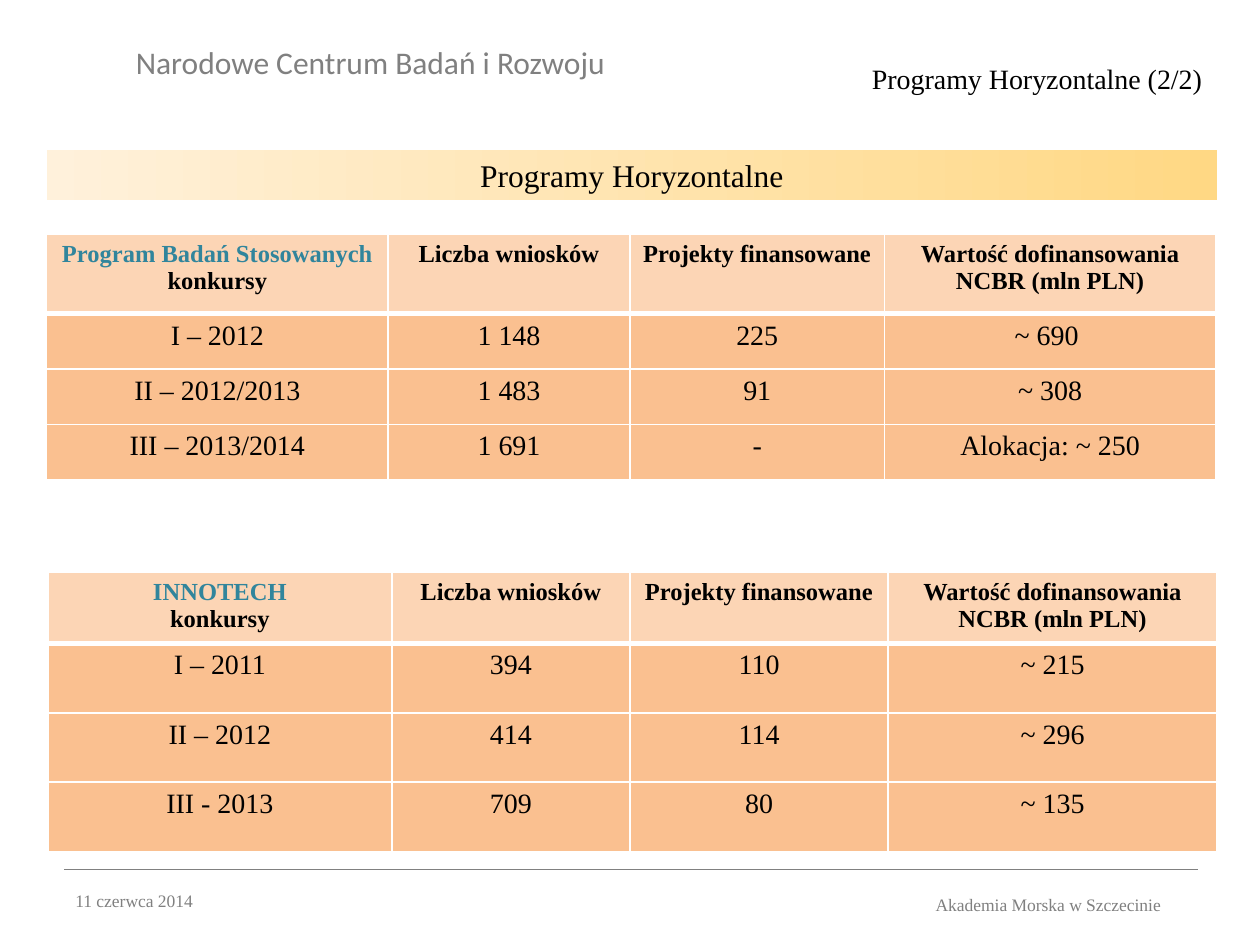
from lxml.etree import SubElement
from pptx import Presentation
from pptx.dml.color import RGBColor
from pptx.enum.shapes import MSO_CONNECTOR, MSO_SHAPE
from pptx.enum.text import MSO_ANCHOR, PP_ALIGN
from pptx.oxml.ns import qn
from pptx.util import Inches, Pt

SERIF = "Times New Roman"
BLACK, GRAY, WHITE, TEAL = "000000", "808080", "FFFFFF", "31859C"
HEADER_FILL, BODY_FILL = "FCD5B5", "FAC090"
HEADINGS = ["Liczba wniosków", "Projekty finansowane",
            "Wartość dofinansowania NCBR (mln PLN)"]
APPLIED_RESEARCH = [
    ["Program Badań Stosowanych\nkonkursy", *HEADINGS],
    ["I – 2012", "1 148", "225", "~ 690 "],
    ["II – 2012/2013", "1 483", "91", "~ 308"],
    ["III – 2013/2014", "1 691", "-", "Alokacja: ~ 250"],
]
INNOTECH = [
    ["INNOTECH\nkonkursy", *HEADINGS],
    ["I – 2011", "394", "110", "~ 215"],
    ["II – 2012", "414", "114", "~ 296"],
    ["III - 2013", "709", "80", "~ 135"],
]


def color(hex_code):
    return RGBColor.from_string(hex_code)


def inches(*lengths):
    return [Inches(length) for length in lengths]


def style_paragraph(para, size, hex_code, align, font=SERIF, bold=False):
    para.alignment = align
    for span in para.runs:
        span.font.name = font
        span.font.size = Pt(size)
        span.font.bold = bold
        span.font.color.rgb = color(hex_code)


def add_label(page, place, text, size, hex_code, align=PP_ALIGN.LEFT,
              anchor=MSO_ANCHOR.TOP, font=SERIF):
    box = page.shapes.add_textbox(*inches(*place))
    frame = box.text_frame
    frame.word_wrap = True
    frame.vertical_anchor = anchor
    frame.text = text
    style_paragraph(frame.paragraphs[0], size, hex_code, align, font)
    return box


def add_banner(page, place, text):
    banner = page.shapes.add_shape(MSO_SHAPE.RECTANGLE, *inches(*place))
    banner.shadow.inherit = False
    banner.line.fill.background()
    banner.fill.gradient()
    banner.fill.gradient_angle = 0
    for stop, hex_code in zip(banner.fill.gradient_stops, ("FFF1DB", "FFD884")):
        stop.color.rgb = color(hex_code)
    frame = banner.text_frame
    frame.vertical_anchor = MSO_ANCHOR.MIDDLE
    frame.text = text
    style_paragraph(frame.paragraphs[0], 18, BLACK, PP_ALIGN.CENTER)


def add_rule(page, left, right, top):
    rule = page.shapes.add_connector(
        MSO_CONNECTOR.STRAIGHT, *inches(left, top, right, top))
    rule.line.color.rgb = color(GRAY)
    rule.line.width = Pt(0.75)
    SubElement(rule._element.spPr, qn("a:effectLst"))


def set_borders(cell, **widths):
    properties = cell._tc.get_or_add_tcPr()
    for side, width in widths.items():
        line = SubElement(properties, qn(f"a:ln{side}"), w=str(Pt(width)))
        fill = SubElement(line, qn("a:solidFill"))
        SubElement(fill, qn("a:srgbClr"), val=WHITE)


def fill_cell(cell, text, row, column):
    is_header = row == 0
    # The thick line lies between the header and the first body row
    set_borders(cell, L=1, R=1, T=3 if row == 1 else 1, B=3 if is_header else 1)
    cell.fill.solid()
    cell.fill.fore_color.rgb = color(HEADER_FILL if is_header else BODY_FILL)
    cell.text_frame.text = text
    for index, para in enumerate(cell.text_frame.paragraphs):
        is_program = is_header and column == 0 and index == 0
        style_paragraph(para, 14 if is_header else 16,
                        TEAL if is_program else BLACK,
                        PP_ALIGN.CENTER, bold=is_header)


def add_program_table(page, left, top, widths, heights, rows):
    frame = page.shapes.add_table(
        len(rows), len(widths),
        *inches(left, top, sum(widths), sum(heights)))
    table = frame.table
    for column, width in zip(table.columns, widths):
        column.width = Inches(width)
    for row, height in zip(table.rows, heights):
        row.height = Inches(height)
    for row, texts in enumerate(rows):
        for column, text in enumerate(texts):
            fill_cell(table.cell(row, column), text, row, column)


def main():
    deck = Presentation()
    deck.slide_width, deck.slide_height = inches(10, 7.5)
    page = deck.slides.add_slide(deck.slide_layouts[6])

    # Header
    add_label(page, (0.98, 0.29, 5.67, 0.35), "Narodowe Centrum Badań i Rozwoju",
              18, GRAY, font="Calibri")
    add_label(page, (6.57, 0.44, 3.07, 0.37), "Programy Horyzontalne (2/2)",
              16, BLACK, PP_ALIGN.RIGHT)
    add_banner(page, (0.37, 1.19, 9.29, 0.4), "Programy Horyzontalne")

    # Program tables
    add_program_table(page, 0.37, 1.86, [2.71, 1.92, 2.02, 2.63],
                      [0.63] + [0.44] * 3, APPLIED_RESEARCH)
    add_program_table(page, 0.38, 4.54, [2.73, 1.89, 2.05, 2.61],
                      [0.55] * 4, INNOTECH)

    # Footer
    add_rule(page, 0.51, 9.51, 6.9)
    add_label(page, (0.5, 6.95, 2.33, 0.4), "11 czerwca 2014", 10, GRAY,
              anchor=MSO_ANCHOR.MIDDLE)
    venue = add_label(page, (7.05, 6.98, 2.44, 0.4),
                      "Akademia Morska w Szczecinie", 10, GRAY,
                      PP_ALIGN.CENTER, MSO_ANCHOR.MIDDLE)
    venue.text_frame.margin_right = 0

    deck.save("out.pptx")


if __name__ == "__main__":
    main()
